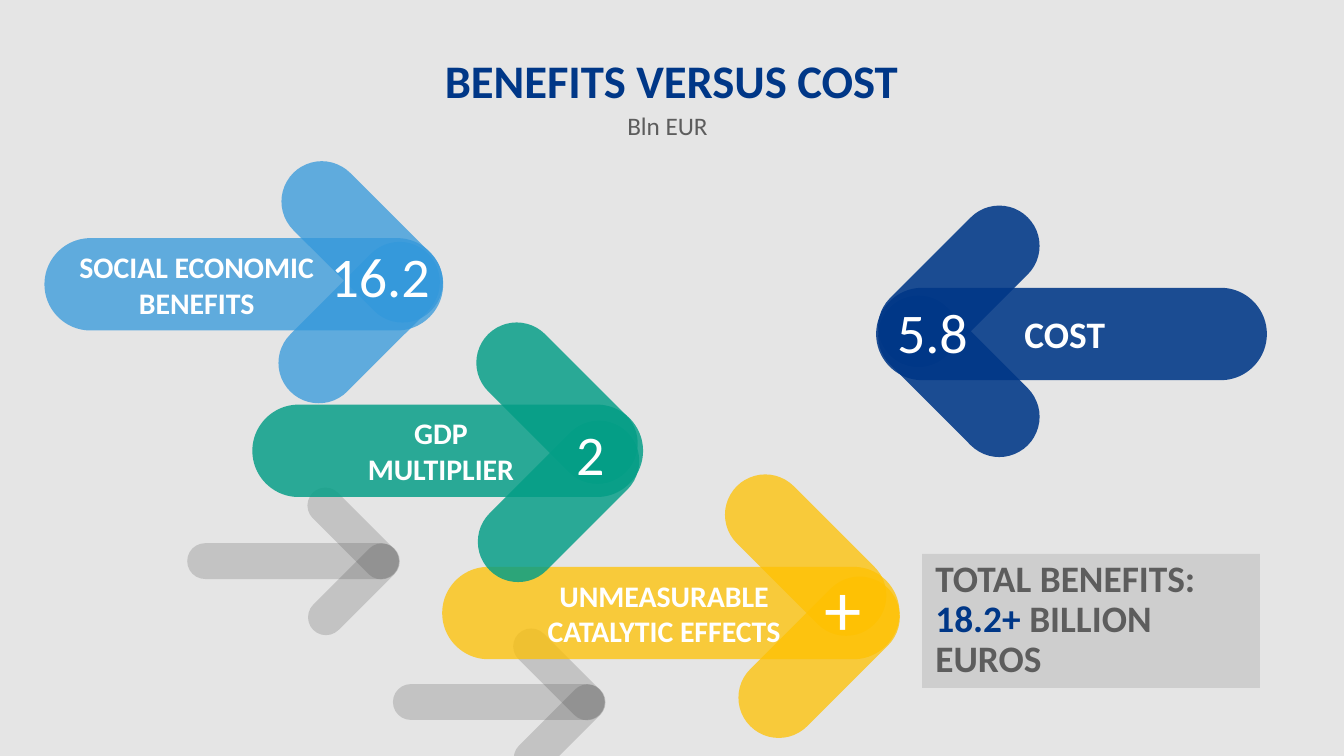
from pptx import Presentation
from pptx.util import Pt
from pptx.dml.color import RGBColor as RGB
from pptx.enum.shapes import MSO_SHAPE as SHAPE
from pptx.enum.text import MSO_ANCHOR as ANCHOR, PP_ALIGN as ALIGN
from pptx.oxml.ns import qn
from lxml.etree import SubElement as Sub

INK = {"back": "E5E5E5", "panel": "CECECE", "shade": "3C3C3C", "text": "5D5D5D",
       "navy": "003787", "blue": "3398DB", "gold": "FFC101", "green": "039E86",
       "white": "FFFFFF"}


def paint(fill, ink, alpha=100):
    """Fill with a solid colour at the given opacity in percent."""
    fill.solid()
    fill.fore_color.rgb = RGB.from_string(INK[ink])
    if alpha < 100:
        tone = fill._xPr.find(qn("a:solidFill"))[0]
        Sub(tone, qn("a:alpha"), val=str(alpha * 1000))


def add_run(para, text, size, ink, bold=False):
    """Add one styled run to a paragraph."""
    run = para.add_run()
    run.text = text
    font = run.font
    font.name, font.size, font.bold = "Calibri", Pt(size), bold
    font.color.rgb = RGB.from_string(INK[ink])


def add_form(slide, kind, box, ink, alpha=100, turn=0):
    """Add a flat shape without line or shadow."""
    form = slide.shapes.add_shape(kind, *map(Pt, box))
    form.shadow.inherit = False
    form.line.fill.background()
    form.rotation = turn
    paint(form.fill, ink, alpha)
    return form


def add_pill(slide, box, ink, alpha, turn=0):
    """Add a bar with fully rounded ends."""
    pill = add_form(slide, SHAPE.ROUNDED_RECTANGLE, box, ink, alpha, turn)
    pill.adjustments[0] = 0.5
    return pill


def add_arrow(slide, fins, fin, bar, ink, alpha, turns=(45, 135)):
    """Build an arrow from two turned fins and a bar, and return the bar."""
    for spot, turn in zip(fins, turns):
        add_pill(slide, (*spot, *fin), ink, alpha, turn)
    return add_pill(slide, bar, ink, alpha)


def add_label(bar, text, size, left):
    """Write a centred bold label on an arrow bar."""
    frame = bar.text_frame
    frame.word_wrap = True
    frame.vertical_anchor = ANCHOR.MIDDLE
    frame.margin_left, frame.margin_right = Pt(left), Pt(50.4)
    frame.margin_top = frame.margin_bottom = 0
    para = frame.paragraphs[0]
    para.alignment = ALIGN.CENTER
    add_run(para, text, size, "white", True)


def add_text(slide, box, text, size, ink, bold=False, align=ALIGN.LEFT):
    """Add a one-line text box."""
    frame = slide.shapes.add_textbox(*map(Pt, box)).text_frame
    frame.word_wrap = True
    para = frame.paragraphs[0]
    para.alignment = align
    add_run(para, text, size, ink, bold)


def add_total(slide, box, lines):
    """Add the panel that sums up the benefits."""
    frame = add_form(slide, SHAPE.RECTANGLE, box, "panel").text_frame
    frame.word_wrap = True
    frame.vertical_anchor = ANCHOR.TOP
    for num, line in enumerate(lines):
        para = frame.add_paragraph() if num else frame.paragraphs[0]
        para.alignment = ALIGN.LEFT
        para.line_spacing = 0.89
        for text, ink in line:
            add_run(para, text, 20, ink, True)


def main():
    """Build the slide and save it."""
    deck = Presentation()
    deck.slide_width, deck.slide_height = Pt(720), Pt(405)
    slide = deck.slides.add_slide(deck.slide_layouts[6])
    paint(slide.background.fill, "back")

    for x, y in ((210.5, 366.5), (100.3, 291)):
        fins = (x + 58.2, y - 14.8), (x + 58.5, y + 15.1)
        add_arrow(slide, fins, (61.6, 19.2), (x, y, 113.4, 19.2), "shade", 20)

    add_text(slide, (67.7, 24.5, 584, 41.8), "BENEFITS VERSUS COST", 25, "navy",
             True, ALIGN.CENTER)
    add_text(slide, (329, 55.4, 123.8, 23.8), "Bln EUR", 13.5, "text")

    right, left = (45, 135), (315, 225)
    arrows = [
        ("SOCIAL ECONOMIC BENEFITS", 16, 0, (141.8, 108), (140.2, 151.2),
         (23.8, 127.6, 213.6), "blue", 75, right, "16.2", 30, (170, 126, 72.7)),
        ("COST", 20, 43.2, (461.5, 131.8), (461.5, 180),
         (469.4, 154.2, 209.3), "navy", 88, left, "5.8", 30, (473.5, 155.9, 53)),
        ("UNMEASURABLE CATALYTIC EFFECTS", 16, 43.2, (379.4, 275.8), (386.6, 330.5),
         (236.9, 303.7, 245), "gold", 75, right, "+", 40, (434.9, 297.4, 43.2)),
        ("GDP MULTIPLIER", 16, 43.2, (246.2, 194.4), (247, 247),
         (135.2, 216.8, 209.3), "green", 83, right, "2", 30, (301.5, 221, 32)),
    ]
    for text, size, inset, up, down, bar, ink, alpha, turns, sum_, big, spot in arrows:
        body = add_arrow(slide, (up, down), (104.4, 43.2), (*bar, 49.5), ink, alpha, turns)
        add_label(body, text, size, inset)
        add_text(slide, (*spot, 44), sum_, big, "white")

    add_total(slide, (494, 296.8, 181, 71.8),
              [[("TOTAL BENEFITS:", "text")],
               [("18.2+ ", "navy"), ("BILLION EUROS", "text")]])
    deck.save("out.pptx")


if __name__ == "__main__":
    main()
